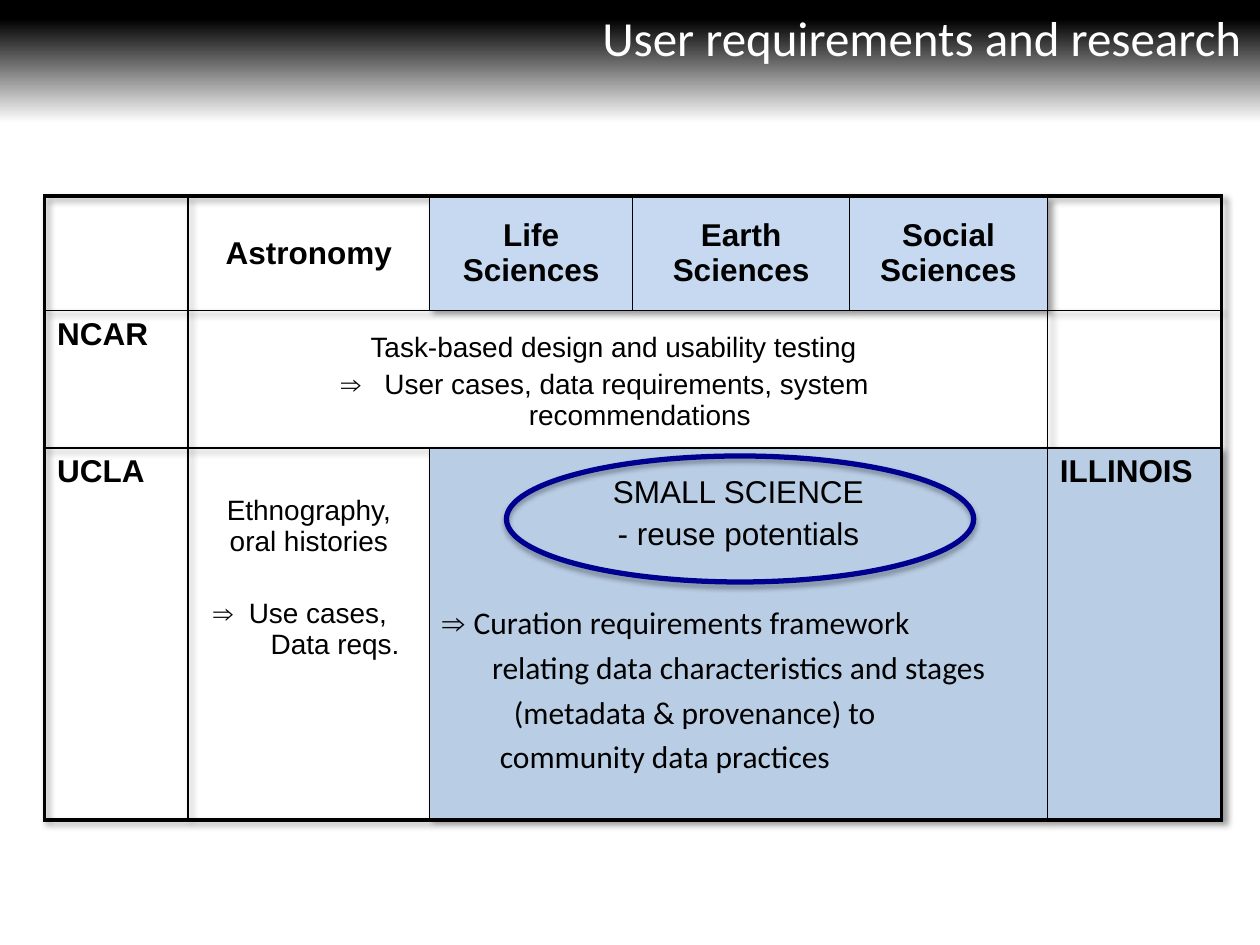
"""Build the slide on user requirements and research."""
from dataclasses import dataclass, field
from typing import Any, Optional

import lxml.etree
import pptx
import pptx.dml.color
import pptx.enum.shapes
import pptx.enum.text
import pptx.oxml
import pptx.oxml.ns
import pptx.util

Pt = pptx.util.Pt
Align = pptx.enum.text.PP_ALIGN
Anchor = pptx.enum.text.MSO_ANCHOR
PLAIN_TABLE = "{2D5ABB26-0587-4C30-8999-92F81FD0307C}"


@dataclass(frozen=True)
class Theme:
    """Colours, fonts and sizes of the slide."""
    black: str = "000000"
    white: str = "FFFFFF"
    header_blue: str = "C6D9F1"
    body_blue: str = "B9CDE5"
    ring: str = "000090"
    sans: str = "Arial"
    humanist: str = "Calibri"
    title: float = 28
    large: float = 18
    small: float = 16
    outer_line: float = 2.25
    inner_line: float = 1
    ring_line: float = 3


THEME = Theme()


@dataclass(frozen=True)
class Paragraph:
    """One paragraph with its format."""
    text: str
    style: dict[str, Any] = field(default_factory=dict)


@dataclass(frozen=True)
class Entry:
    """One filled table cell, its span and its insets."""
    row: int
    column: int
    paragraphs: tuple[Paragraph, ...]
    span: int = 1
    fill: Optional[str] = None
    anchor: Any = Anchor.TOP
    left: float = 7.2
    top: float = 3.6
    right: float = 7.2


COLUMNS = (82, 138, 116, 124, 113, 99.4)
ROWS = (65.5, 78.5, 212.5)
CENTER = {"align": Align.CENTER}
LABEL = {"bold": True}
HEADER = CENTER | LABEL
CENTER_SMALL = CENTER | {"size": THEME.small}
HUMANIST = {"font": THEME.humanist, "before": 3.6}

HEADERS = (("Astronomy", None), ("Life Sciences", THEME.header_blue),
           ("Earth Sciences", THEME.header_blue), ("Social Sciences", THEME.header_blue))

ENTRIES = (
    *(Entry(0, column, (Paragraph(text, HEADER),), fill=fill, anchor=Anchor.MIDDLE)
      for column, (text, fill) in enumerate(HEADERS, start=1)),
    Entry(1, 0, (Paragraph("NCAR", LABEL),)),
    Entry(1, 1, (
        Paragraph("Task-based design and usability testing", CENTER_SMALL | {"indent": 12}),
        Paragraph("User cases, data requirements, system\nrecommendations",
                  CENTER_SMALL | {"before": 3, "indent": 42, "hanging": 40, "arrow_gap": 4.5}),
    ), span=4, top=12.6, right=24),
    Entry(2, 0, (Paragraph("UCLA", LABEL),)),
    Entry(2, 1, (
        Paragraph("Ethnography, oral histories", CENTER_SMALL | {"indent": 10}),
        Paragraph("Use cases,\nData reqs.",
                  CENTER_SMALL | {"before": 23.5, "indent": 40, "hanging": 40, "arrow_gap": 2.2}),
    ), left=0, top=27, right=10),
    Entry(2, 2, (
        Paragraph("SMALL SCIENCE", CENTER),
        Paragraph("- reuse potentials", CENTER | {"before": 3.6}),
        Paragraph("Curation requirements framework", HUMANIST | {"before": 30, "arrow_gap": 0}),
        Paragraph("relating data characteristics and stages", HUMANIST | {"indent": 28.5}),
        Paragraph("(metadata & provenance) to", HUMANIST | {"indent": 41}),
        Paragraph("community data practices", HUMANIST | {"indent": 33}),
    ), span=3, fill=THEME.body_blue, top=15.6),
    Entry(2, 5, (Paragraph("ILLINOIS", LABEL),), fill=THEME.body_blue),
)


def rgb(value: str) -> pptx.dml.color.RGBColor:
    """Return the colour for a hex string."""
    return pptx.dml.color.RGBColor.from_string(value)


def write(frame: Any, text: str, *, size: float = THEME.large, font: str = THEME.sans,
          color: str = THEME.black, bold: bool = False, align: Any = Align.LEFT,
          before: float = 0, indent: float = 0, hanging: float = 0,
          arrow_gap: Optional[float] = None) -> None:
    """Write one formatted paragraph, led by an arrow if a gap is given."""
    first = frame.paragraphs[0]
    paragraph = frame.add_paragraph() if first.runs else first
    paragraph.alignment = align
    paragraph.space_before = Pt(before)
    properties = paragraph._p.get_or_add_pPr()
    properties.set("marL", str(Pt(indent)))
    properties.set("indent", str(-Pt(hanging)))
    pieces = [(line, font, 0) for line in text.split("\n")]
    if arrow_gap is not None:
        pieces.insert(0, ("⇒ ", THEME.sans, arrow_gap))
    for index, (piece, face, tracking) in enumerate(pieces):
        if index > (arrow_gap is not None):
            paragraph.add_line_break()
        run = paragraph.add_run()
        run.text = piece
        run.font.name, run.font.size, run.font.bold = face, Pt(size), bold
        run.font.color.rgb = rgb(color)
        if tracking:
            run._r.get_or_add_rPr().set("spc", str(round(tracking * 100)))


def shadow_effect(blur: float, distance: float, angle: int, opacity: int) -> Any:
    """Return an effect list with one outer shadow."""
    return pptx.oxml.parse_xml(
        f'<a:effectLst {pptx.oxml.ns.nsdecls("a")}><a:outerShdw blurRad="{Pt(blur)}" '
        f'dist="{Pt(distance)}" dir="{angle * 60000}" algn="tl" rotWithShape="0">'
        f'<a:srgbClr val="{THEME.black}"><a:alpha val="{opacity * 1000}"/></a:srgbClr>'
        '</a:outerShdw></a:effectLst>')


def draw_borders(cell: Any, widths: dict[str, float]) -> None:
    """Set the width of each side of a cell."""
    properties = cell._tc.get_or_add_tcPr()
    for index, (side, width) in enumerate(widths.items()):
        properties.insert(index, pptx.oxml.parse_xml(
            f'<a:ln{side} {pptx.oxml.ns.nsdecls("a")} w="{Pt(width)}"><a:solidFill>'
            f'<a:srgbClr val="{THEME.black}"/></a:solidFill></a:ln{side}>'))


def fill_entry(table: Any, entry: Entry) -> None:
    """Merge, fill and write one table cell."""
    cell = table.cell(entry.row, entry.column)
    if entry.span > 1:
        cell.merge(table.cell(entry.row, entry.column + entry.span - 1))
    cell.vertical_anchor = entry.anchor
    cell.margin_left, cell.margin_top, cell.margin_right = map(
        Pt, (entry.left, entry.top, entry.right))
    if entry.fill:
        cell.fill.solid()
        cell.fill.fore_color.rgb = rgb(entry.fill)
    for paragraph in entry.paragraphs:
        write(cell.text_frame, paragraph.text, **paragraph.style)


def draw_table(slide: Any) -> None:
    """Draw the table of sites and disciplines."""
    table = slide.shapes.add_table(len(ROWS), len(COLUMNS), Pt(25.5), Pt(112),
                                   Pt(sum(COLUMNS)), Pt(sum(ROWS))).table
    table.first_row = table.horz_banding = False
    properties = table._tbl.tblPr
    properties.find(pptx.oxml.ns.qn("a:tableStyleId")).text = PLAIN_TABLE
    properties.insert(0, shadow_effect(4, 3, 45, 40))
    for column, width in zip(table.columns, COLUMNS):
        column.width = Pt(width)
    for row, height in zip(table.rows, ROWS):
        row.height = Pt(height)
    for entry in ENTRIES:
        fill_entry(table, entry)
    for r in range(len(ROWS)):
        for c in range(len(COLUMNS)):
            cell = table.cell(r, c)
            if not cell.is_spanned:
                outer = {"L": c == 0, "R": c == len(COLUMNS) - 1,
                         "T": r == 0, "B": r == len(ROWS) - 1}
                draw_borders(cell, {side: THEME.outer_line if edge else THEME.inner_line
                                    for side, edge in outer.items()})


def draw_background(slide: Any) -> None:
    """Fade the top of the slide from black to white."""
    fill = slide.background.fill
    fill.gradient()
    fill.gradient_angle = 90
    for stop, position, color in zip(fill.gradient_stops, (0.87, 0.98),
                                     (THEME.white, THEME.black)):
        stop.position = position
        stop.color.rgb = rgb(color)


def draw_ring(slide: Any) -> None:
    """Circle the small science heading."""
    ring = slide.shapes.add_shape(pptx.enum.shapes.MSO_SHAPE.OVAL,
                                  Pt(289.4), Pt(260.6), Pt(267), Pt(72))
    ring.fill.background()
    ring.line.color.rgb = rgb(THEME.ring)
    ring.line.width = Pt(THEME.ring_line)
    ring._element.spPr.append(shadow_effect(3.1, 1.8, 90, 35))


def main() -> None:
    """Build and save the presentation."""
    deck = pptx.Presentation()
    deck.slide_width, deck.slide_height = Pt(720), Pt(540)
    slide = deck.slides.add_slide(deck.slide_layouts[5])
    draw_background(slide)
    heading = slide.shapes.title
    heading.left, heading.top, heading.width, heading.height = map(Pt, (181.4, -8, 535, 58.3))
    heading.text_frame.vertical_anchor = Anchor.MIDDLE
    write(heading.text_frame, "User requirements and research", size=THEME.title,
          font=THEME.humanist, color=THEME.white, align=Align.RIGHT)
    draw_table(slide)
    draw_ring(slide)
    deck.save("out.pptx")


if __name__ == "__main__":
    main()
